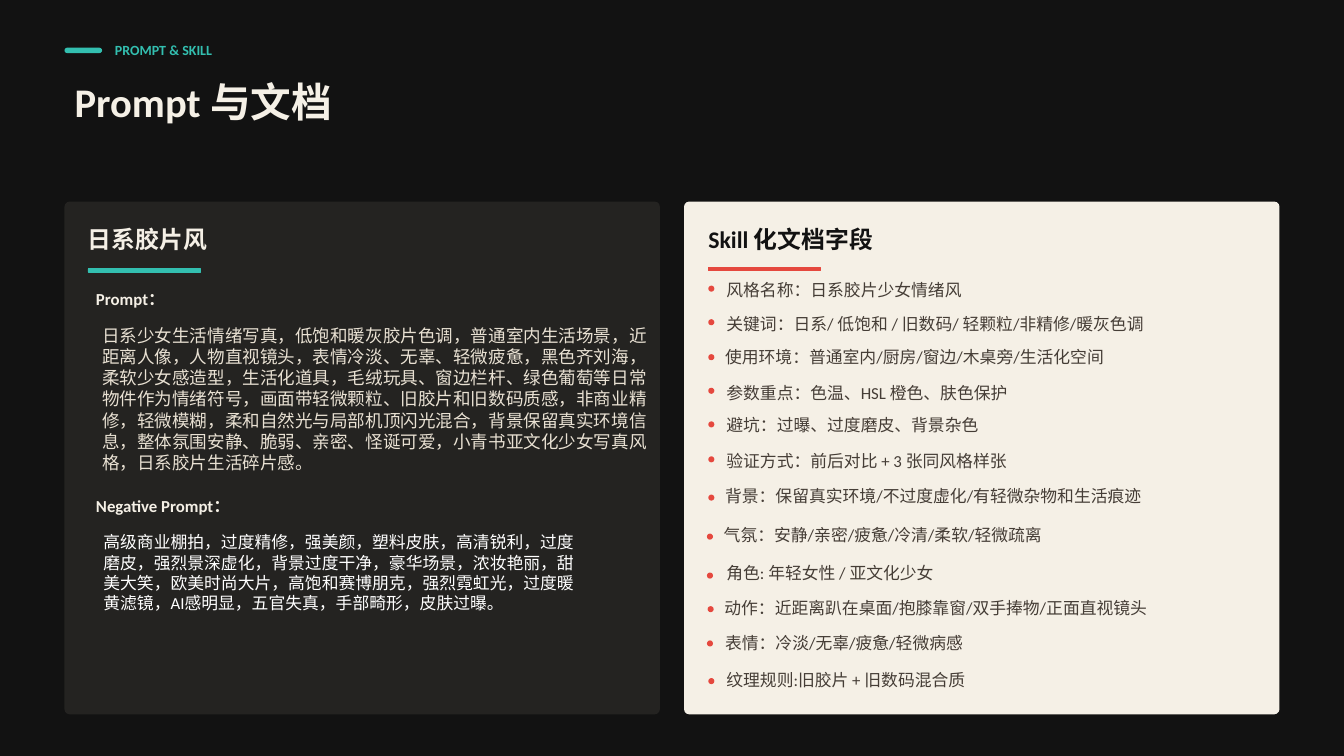
from pptx import Presentation
from pptx.dml.color import RGBColor
from pptx.enum.shapes import MSO_SHAPE
from pptx.enum.text import MSO_ANCHOR, MSO_AUTO_SIZE, PP_ALIGN
from pptx.util import Inches, Pt

RECT, ROUND = MSO_SHAPE.RECTANGLE, MSO_SHAPE.ROUNDED_RECTANGLE
TOP, LEFT, NO_FIT = MSO_ANCHOR.TOP, PP_ALIGN.LEFT, MSO_AUTO_SIZE.NONE

FONT = "Calibri"
INK = RGBColor(0x12, 0x12, 0x12)
PANEL = RGBColor(0x24, 0x23, 0x21)
CREAM = RGBColor(0xF5, 0xF0, 0xE6)
SAND = RGBColor(0xE9, 0xE1, 0xD3)
BROWN = RGBColor(0x45, 0x3D, 0x36)
WHITE = RGBColor(0xFF, 0xFF, 0xFF)
TEAL = RGBColor(0x33, 0xBF, 0xB0)
RED = RGBColor(0xE5, 0x48, 0x3E)

# Content
KICKER = "PROMPT & SKILL"
TITLE = "Prompt 与文档"
# heading, card left, heading left, rule top, card fill, heading colour, rule colour
CARDS = [
    ("日系胶片风", 0.96, 1.31, 4.0, PANEL, CREAM, TEAL),
    ("Skill 化文档字段", 10.18, 10.54, 3.98, CREAM, INK, RED),
]
PROMPT = (
    "日系少女生活情绪写真，低饱和暖灰胶片色调，普通室内生活场景，近距离人像，"
    "人物直视镜头，表情冷淡、无辜、轻微疲惫，黑色齐刘海，柔软少女感造型，"
    "生活化道具，毛绒玩具、窗边栏杆、绿色葡萄等日常物件作为情绪符号，"
    "画面带轻微颗粒、旧胶片和旧数码质感，非商业精修，轻微模糊，"
    "柔和自然光与局部机顶闪光混合，背景保留真实环境信息，"
    "整体氛围安静、脆弱、亲密、怪诞可爱，小青书亚文化少女写真风格，"
    "日系胶片生活碎片感。"
)
NEGATIVE = (
    "高级商业棚拍，过度精修，强美颜，塑料皮肤，高清锐利，过度磨皮，"
    "强烈景深虚化，背景过度干净，豪华场景，浓妆艳丽，甜美大笑，"
    "欧美时尚大片，高饱和赛博朋克，强烈霓虹光，过度暖黄滤镜，"
    "AI感明显，五官失真，手部畸形，皮肤过曝。"
)
# text, dot left, dot top, text left, text top
FIELDS = [
    ("风格名称：日系胶片少女情绪风", 10.54, 4.25, 10.81, 4.16),
    ("关键词：日系/ 低饱和 / 旧数码/ 轻颗粒/非精修/暖灰色调", 10.54, 4.75, 10.81, 4.67),
    ("使用环境：普通室内/厨房/窗边/木桌旁/生活化空间", 10.54, 5.27, 10.79, 5.16),
    ("参数重点：色温、HSL 橙色、肤色保护", 10.54, 5.77, 10.81, 5.7),
    ("避坑：过曝、过度磨皮、背景杂色", 10.54, 6.27, 10.81, 6.17),
    ("验证方式：前后对比 + 3 张同风格样张", 10.54, 6.79, 10.81, 6.7),
    ("背景：保留真实环境/不过度虚化/有轻微杂物和生活痕迹", 10.54, 7.36, 10.79, 7.23),
    ("气氛：安静/亲密/疲惫/冷清/柔软/轻微疏离", 10.52, 7.94, 10.77, 7.81),
    ("角色: 年轻女性 / 亚文化少女", 10.52, 8.52, 10.81, 8.37),
    ("动作：近距离趴在桌面/抱膝靠窗/双手捧物/正面直视镜头", 10.53, 9.02, 10.78, 8.89),
    ("表情：冷淡/无辜/疲惫/轻微病感", 10.52, 9.53, 10.79, 9.41),
    ("纹理规则:旧胶片 + 旧数码混合质", 10.54, 10.09, 10.81, 9.97),
]

prs = Presentation()
prs.slide_width, prs.slide_height = Inches(20), Inches(11.25)
s = prs.slides.add_slide(prs.slide_layouts[5])
s.background.fill.solid()
s.background.fill.fore_color.rgb = INK


def set_text(sp, text, size, color, bold=False, inset=False):
    tf = sp.text_frame
    tf.word_wrap = True
    tf.auto_size = NO_FIT
    tf.vertical_anchor = TOP
    if not inset:
        tf.margin_left = tf.margin_top = tf.margin_right = tf.margin_bottom = 0
    p = tf.paragraphs[0]
    p.alignment = LEFT
    r = p.add_run()
    r.text = text
    r.font.name, r.font.size, r.font.bold = FONT, Pt(size), bold
    r.font.color.rgb = color


def add_text(x, y, w, h, *args, **kwargs):
    sp = s.shapes.add_textbox(Inches(x), Inches(y), Inches(w), Inches(h))
    set_text(sp, *args, **kwargs)


def add_block(kind, x, y, w, h, color, radius=None, outlined=False):
    sp = s.shapes.add_shape(kind, Inches(x), Inches(y), Inches(w), Inches(h))
    sp.shadow.inherit = False
    sp.fill.solid()
    sp.fill.fore_color.rgb = color
    if outlined:
        sp.line.color.rgb = color
        sp.line.width = Pt(0)
    else:
        sp.line.fill.background()
    if radius is not None:
        sp.adjustments[0] = radius


# Header
title = s.shapes.title
title.left, title.top = Inches(1.11), Inches(1.15)
title.width, title.height = Inches(18.08), Inches(0.73)
set_text(title, TITLE, 43.5, CREAM, bold=True)
add_block(ROUND, 0.96, 0.71, 0.56, 0.08, TEAL, 0.5)
add_text(1.71, 0.62, 4.38, 0.25, KICKER, 15, TEAL, bold=True)

# Cards with heading and rule
for heading, card_x, x, rule_y, fill, color, accent in CARDS:
    add_block(ROUND, card_x, 3, 8.86, 7.63, fill, 0.01)
    add_text(x, 3.35, 8.17, 0.44, heading, 25.5, color, bold=True)
    add_block(RECT, x, rule_y, 1.67, 0.05, accent, outlined=True)

# Left card: prompts
add_text(1.33, 4.24, 1.92, 0.4, "Prompt：", 18, CREAM, bold=True, inset=True)
add_text(1.52, 4.84, 8.17, 2.84, PROMPT, 18.8, SAND)
add_text(1.33, 7.33, 2.61, 0.35, "Negative Prompt：", 18, CREAM, bold=True, inset=True)
add_text(1.44, 7.87, 7.37, 1.31, NEGATIVE, 18, WHITE, inset=True)

# Right card: field list
for text, dot_x, dot_y, x, y in FIELDS:
    add_block(ROUND, dot_x, dot_y, 0.09, 0.09, RED, 0.5)
    add_text(x, y, 7.9, 0.31, text, 18, BROWN)

prs.save("out.pptx")
